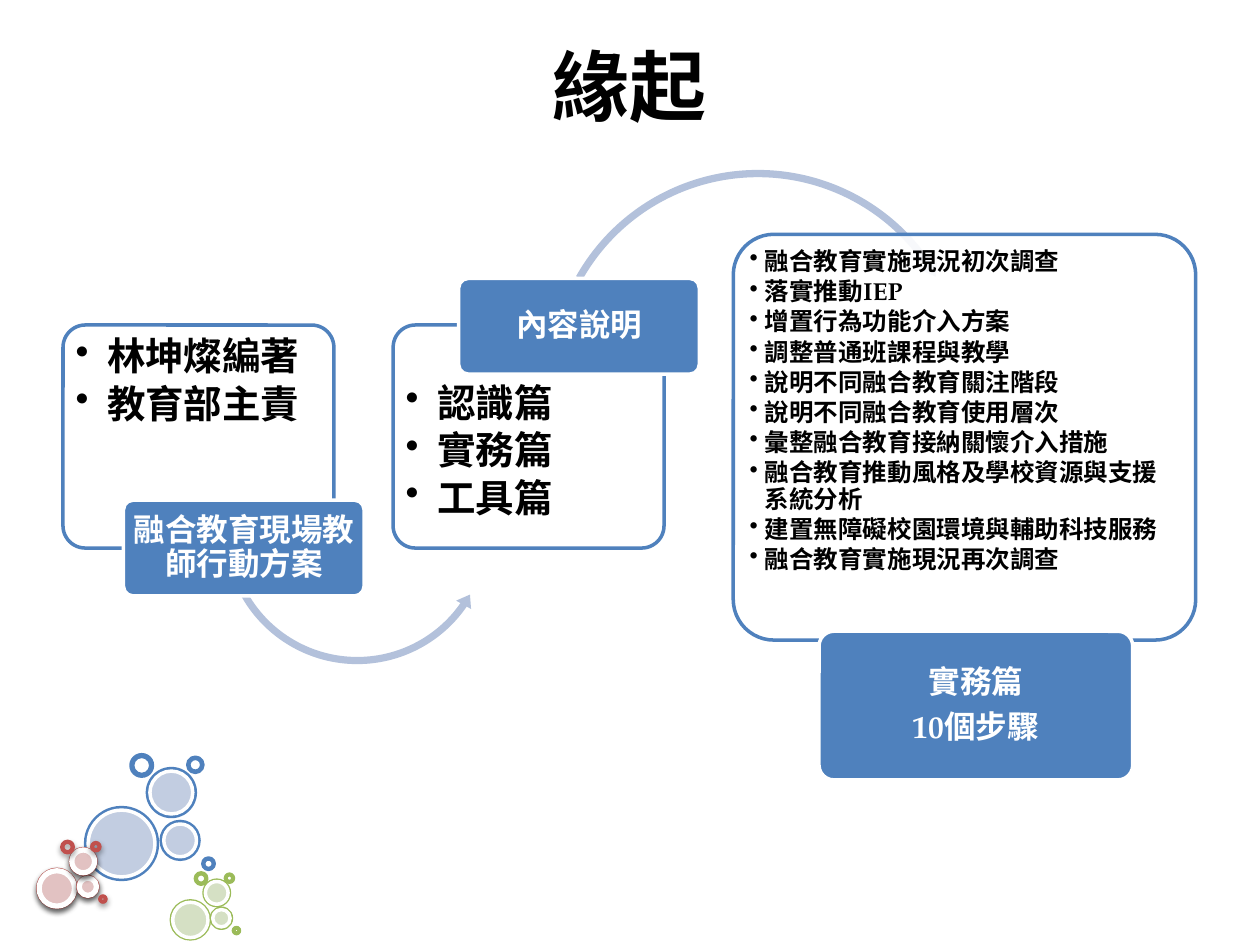
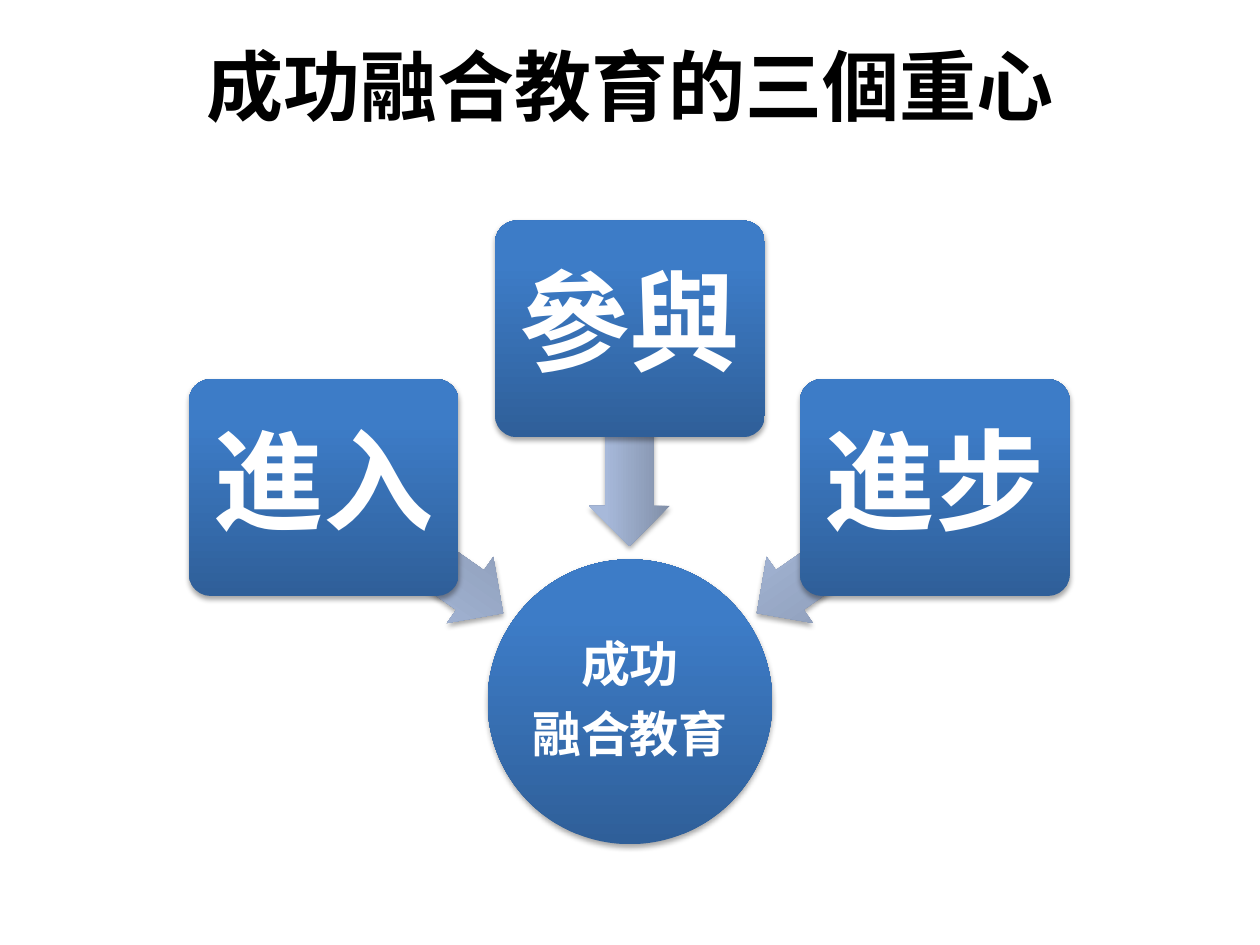
from pptx import Presentation
from pptx.util import Inches, Pt
from pptx.dml.color import RGBColor
from pptx.enum.shapes import MSO_SHAPE as Kind
from pptx.enum.text import PP_ALIGN as Align, MSO_ANCHOR as Anchor
from pptx.oxml.ns import qn
from lxml.etree import SubElement as Sub

hue = RGBColor.from_string
SERIF, SANS = "TeX Gyre Pagella", "Noto Sans CJK SC"
BLUE, RED, GREEN, WHITE, BLACK = "4F81BD", "C0504D", "9BBB59", "FFFFFF", "000000"
NAVY, STEEL = ("2F5F99", "3D7CC7"), ("818FA8", "A7B9DA")


def draw(slide, kind, box, fill, line=None, width=2, adj=(), shade=0, alpha=0, turn=0):
    shape = slide.shapes.add_shape(kind, *map(Inches, box))
    shape.rotation = turn
    for i, value in enumerate(adj):
        shape.adjustments[i] = value
    if isinstance(fill, tuple):
        shape.fill.gradient()
        shape.fill.gradient_angle = 90
        for stop, tone, place in zip(shape.fill.gradient_stops, fill, (0, 0.8)):
            stop.color.rgb = hue(tone)
            stop.position = place
    else:
        shape.fill.solid()
        shape.fill.fore_color.rgb = hue(fill)
    if alpha:
        tone = shape._element.spPr.find(qn("a:solidFill"))[0]
        Sub(tone, qn("a:alpha"), val=str(alpha * 1000))
    if line:
        shape.line.color.rgb = hue(line)
        shape.line.width = Pt(width)
    else:
        shape.line.fill.background()
    shape.shadow.inherit = False
    if shade:
        glow = Sub(shape._element.spPr.find(qn("a:effectLst")), qn("a:outerShdw"),
                   blurRad=str(Pt(3.1)), dist=str(Pt(1.7)), dir="5400000", rotWithShape="0")
        tone = Sub(glow, qn("a:srgbClr"), val=BLACK)
        Sub(tone, qn("a:alpha"), val=str(shade * 1000))


def write(frame, lines, size, tone=WHITE, name=SERIF, pad=(0.04, 0.03), gap=0.35, dent=0):
    sides = dict(margin_left=pad[0], margin_right=pad[0], margin_top=pad[1], margin_bottom=pad[1])
    for key, value in sides.items():
        setattr(frame, key, Inches(value))
    frame.word_wrap = True
    frame.vertical_anchor = Anchor.TOP if dent else Anchor.MIDDLE
    for i, line in enumerate(lines):
        para = frame.add_paragraph() if i else frame.paragraphs[0]
        form = dict(alignment=Align.LEFT if dent else Align.CENTER,
                    line_spacing=0.9, space_before=Pt(0), space_after=Pt(size * gap))
        for key, value in form.items():
            setattr(para, key, value)
        if dent:
            prop = para._p.get_or_add_pPr()
            prop.set("marL", str(Inches(dent)))
            prop.set("indent", str(-Inches(dent)))
            Sub(prop, qn("a:buChar"), char="•")
        run = para.add_run()
        run.text = line
        for key, value in dict(size=Pt(size), bold=True, name=name).items():
            setattr(run.font, key, value)
        run.font.color.rgb = hue(tone)
        Sub(run._r.get_or_add_rPr(), qn("a:ea"), typeface=SANS)


deck = Presentation()
deck.slide_width, deck.slide_height = Inches(10), Inches(7.5)
pages = []
for head in ("緣起", "成功融合教育的三個重心"):
    page = deck.slides.add_slide(deck.slide_layouts[5])
    title = page.shapes.title
    title.left, title.top, title.width, title.height = map(Inches, (0.5, 0.05, 9, 1.25))
    write(title.text_frame, [head], 44, BLACK, SANS, (0.1, 0.05), 0)
    title.text_frame.paragraphs[0].line_spacing = 1.0
    pages.append(page)
start, focus = pages

steps = ["融合教育實施現況初次調查", "落實推動IEP", "增置行為功能介入方案",
         "調整普通班課程與教學", "說明不同融合教育關注階段", "說明不同融合教育使用層次",
         "彙整融合教育接納關懷介入措施", "融合教育推動風格及學校資源與支援系統分析",
         "建置無障礙校園環境與輔助科技服務", "融合教育實施現況再次調查"]
cards = [
    ((0.5, 2.58, 2.15, 1.77), (0.55, 2.63, 2.06, 1.31), ["林坤燦編著", "教育部主責"], 22, 0.25,
     (0.98, 3.97, 1.91, 0.76), ["融合教育現場教師行動方案"],
     (Kind.LEFT_CIRCULAR_ARROW, (1.74, 3.12, 2.19, 2.19), (0.026, 3.203, 20.834, 90.121, 0.031))),
    ((3.12, 2.58, 2.15, 1.77), (3.17, 3, 2.06, 1.31), ["認識篇", "實務篇", "工具篇"], 22, 0.25,
     (3.64, 2.21, 1.91, 0.76), ["內容說明"],
     (Kind.CIRCULAR_ARROW, (4.32, 1.31, 3.39, 3.39), (0.017, 2.028, 196.091, 125.629, 0.02))),
    ((5.82, 1.86, 3.67, 3.22), (5.9, 1.93, 3.53, 2.38), steps, 14, 0.12,
     (6.5, 5.01, 2.49, 1.18), ["實務篇", "10個步驟"], None),
]
for card, body, items, size, dent, tag, label, arc in cards:
    draw(start, Kind.ROUNDED_RECTANGLE, card, WHITE, BLUE, adj=[0.1], alpha=90)
    area = start.shapes.add_textbox(*map(Inches, body))
    write(area.text_frame, items, size, BLACK, pad=(0.05, 0.05), gap=0.15, dent=dent)
    if arc:
        kind, box, bend = arc
        draw(start, kind, box, "B3C1DB", adj=bend)
    draw(start, Kind.ROUNDED_RECTANGLE, tag, BLUE, WHITE, adj=[0.1])
    x, y, w, h = tag
    area = start.shapes.add_textbox(*map(Inches, (x + 0.03, y + 0.03, w - 0.06, h - 0.06)))
    write(area.text_frame, label, 18)

discs = [(0, 0, 0.57), (0.6, 0.11, 0.3), (0.49, -0.31, 0.38)]
rings = [(0.36, -0.42, 0.17), (0.81, -0.4, 0.12), (0.93, 0.4, 0.09)]
groups = [(0.68, 6.41, 1, BLUE, "C2CDE1", 2, 0),
          (0.3, 6.9, 0.53, RED, "E2C2C2", 3, 38),
          (1.36, 7.15, 0.53, GREEN, "D5E0C4", 2, 0)]
for left, top, scale, tone, pale, width, shade in groups:
    for dx, dy, size in discs:
        x, y, d, inset = left + dx * scale, top + dy * scale, size * scale, 0.02 * scale
        draw(start, Kind.OVAL, (x, y, d, d), tone, tone, shade=shade)
        inner = d - 2 * inset
        draw(start, Kind.OVAL, (x + inset, y + inset, inner, inner), pale, WHITE, width, shade=shade)
    for dx, dy, size in rings:
        d = size * scale
        draw(start, Kind.DONUT, (left + dx * scale, top + dy * scale, d, d), tone, tone,
             adj=[0.075], shade=shade)

draw(focus, Kind.OVAL, (3.87, 4.44, 2.26, 2.26), NAVY, shade=35)
area = focus.shapes.add_textbox(*map(Inches, (4.2, 4.77, 1.6, 1.6)))
write(area.text_frame, ["成功", "融合教育"], 28, pad=(0.02, 0.02))
goals = [("進入", 1.5, 3.01, 2.42, 4.05, 215),
         ("參與", 3.93, 1.75, 4.13, 3.15, 270),
         ("進步", 6.35, 3.01, 5.85, 4.05, 325)]
for word, x, y, left, top, turn in goals:
    draw(focus, Kind.LEFT_ARROW, (left, top, 1.73, 0.64), STEEL, adj=(0.6, 0.5), shade=35, turn=turn)
    draw(focus, Kind.ROUNDED_RECTANGLE, (x, y, 2.14, 1.72), NAVY, adj=[0.1], shade=35)
    area = focus.shapes.add_textbox(*map(Inches, (x + 0.05, y + 0.05, 2.04, 1.61)))
    write(area.text_frame, [word], 63, pad=(0.13, 0.13))

deck.save("out.pptx")
